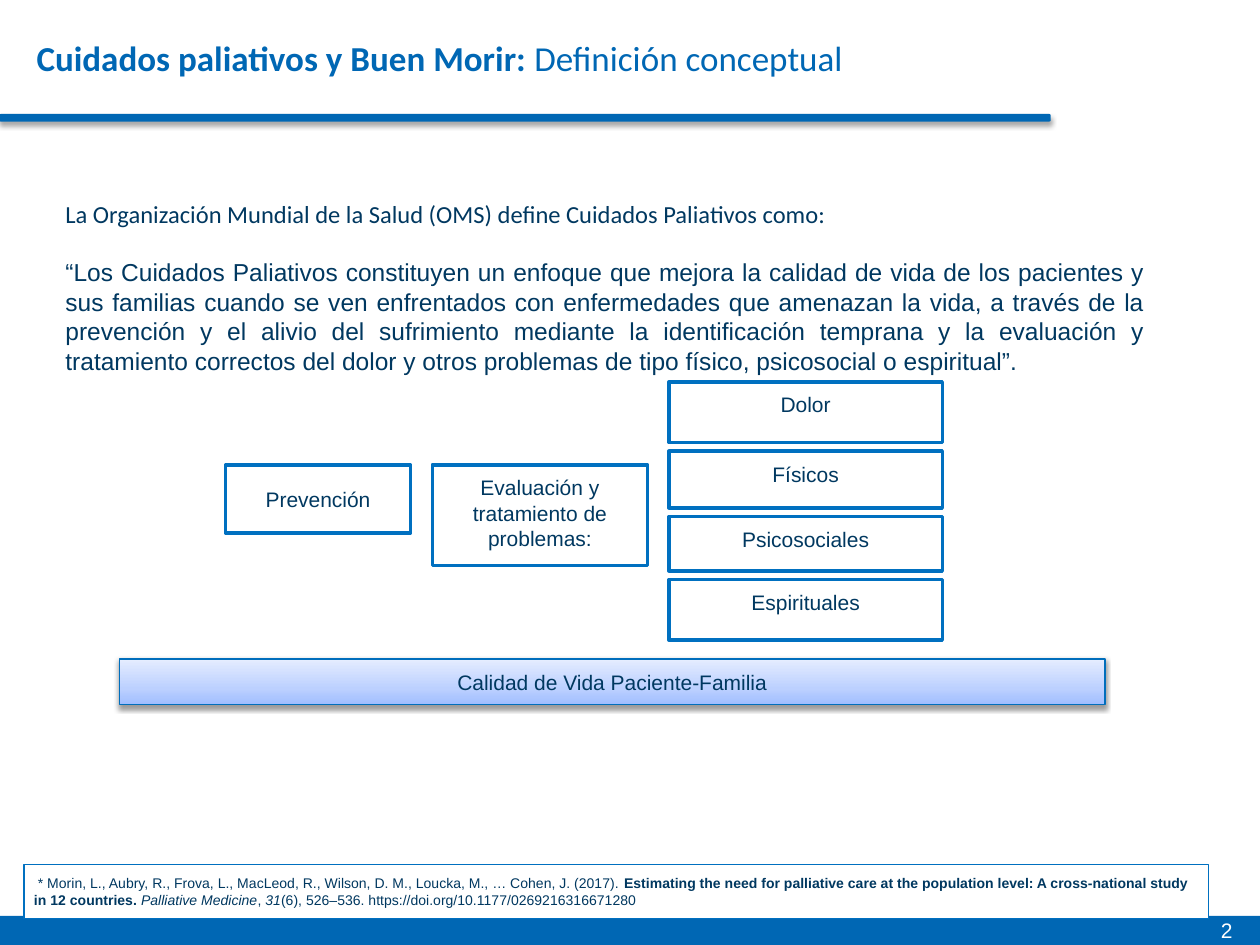
from copy import deepcopy

from lxml import etree
from pptx import Presentation
from pptx.dml.color import RGBColor
from pptx.enum.shapes import MSO_SHAPE
from pptx.enum.text import MSO_ANCHOR, PP_ALIGN
from pptx.oxml import parse_xml
from pptx.util import Pt

RECT, ROUNDED = MSO_SHAPE.RECTANGLE, MSO_SHAPE.ROUNDED_RECTANGLE
TOP, MIDDLE = MSO_ANCHOR.TOP, MSO_ANCHOR.MIDDLE
LEFT, CENTER, JUSTIFY = PP_ALIGN.LEFT, PP_ALIGN.CENTER, PP_ALIGN.JUSTIFY
NS = "http://schemas.openxmlformats.org/drawingml/2006/main"
COLORS = {
    "blue": "0067B4",
    "border": "0070C0",
    "bar_border": "006EBC",
    "navy": "003860",
    "white": "FFFFFF",
}
BAR_STOPS = [(0, "A0BEFF"), (0.35, "BCD0FF"), (1, "E5EDFF")]
INSET = 5.76

QUOTE = (
    "“Los Cuidados Paliativos constituyen un enfoque que mejora la calidad de vida "
    "de los pacientes y sus familias cuando se ven enfrentados con enfermedades que "
    "amenazan la vida, a través de la prevención y el alivio del sufrimiento mediante "
    "la identificación temprana y la evaluación y tratamiento correctos del dolor y "
    "otros problemas de tipo físico, psicosocial o espiritual”."
)
REFERENCE = [
    (" * Morin, L., Aubry, R., Frova, L., MacLeod, R., Wilson, D. M., Loucka, M., "
     "… Cohen, J. (2017). ", ""),
    ("Estimating the need for palliative care at the population level: "
     "A cross-national study in 12 countries. ", "b"),
    ("Palliative Medicine", "i"),
    (", ", ""),
    ("31", "i"),
    ("(6), 526–536. https://doi.org/10.1177/0269216316671280", ""),
]
PROBLEMS = [("Dolor", 34.6), ("Físicos", 32.4), ("Psicosociales", 31), ("Espirituales", 34.6)]


def rgb(name):
    return RGBColor.from_string(COLORS[name])


def write(p, text, size=12, font="Arial", color="navy", align=LEFT, before=0):
    """Fill a paragraph from a string or a list of (text, style), style being '', 'b' or 'i'."""
    p.alignment = align
    p.space_before = Pt(before)
    for part, style in [(text, "")] if isinstance(text, str) else text:
        r = p.add_run()
        r.text = part
        r.font.size = Pt(size)
        r.font.name = font
        r.font.color.rgb = rgb(color)
        r.font.bold = style == "b"
        r.font.italic = style == "i"


def set_frame(sp, inset=INSET, anchor=TOP):
    tf = sp.text_frame
    tf.word_wrap = True
    tf.vertical_anchor = anchor
    tf.margin_left = tf.margin_right = tf.margin_top = tf.margin_bottom = Pt(inset)
    return tf


def add_box(slide, x, y, w, h, shape=RECT, fill="white", line="border", width=2):
    sp = slide.shapes.add_shape(shape, Pt(x), Pt(y), Pt(w), Pt(h))
    sp.shadow.inherit = False
    sp.fill.solid()
    sp.fill.fore_color.rgb = rgb(fill)
    if line:
        sp.line.color.rgb = rgb(line)
        sp.line.width = Pt(width)
    else:
        sp.line.fill.background()
    return sp


def add_label(slide, text, x, y, w, h, anchor=TOP, width=2, line="border"):
    sp = add_box(slide, x, y, w, h, line=line, width=width)
    write(set_frame(sp, anchor=anchor).paragraphs[0], text, align=CENTER)
    return sp


def add_text(slide, x, y, w, h):
    return set_frame(slide.shapes.add_textbox(Pt(x), Pt(y), Pt(w), Pt(h)), inset=0)


def add_shadow(sp, blur, distance, alpha):
    """Cast a black shadow straight down; alpha is a percentage."""
    effects = sp._element.spPr.find(f"{{{NS}}}effectLst")
    shadow = etree.fromstring(
        f'<a:outerShdw xmlns:a="{NS}" blurRad="{Pt(blur)}" dist="{Pt(distance)}" '
        f'dir="5400000" rotWithShape="0"><a:srgbClr val="000000">'
        f'<a:alpha val="{alpha * 1000}"/></a:srgbClr></a:outerShdw>'
    )
    effects.append(parse_xml(etree.tostring(shadow)))


def set_gradient(sp, stops):
    """Blend the stops from the bottom of the shape to its top."""
    sp.fill.gradient()
    sp.fill.gradient_angle = 90
    gs_list = sp._element.spPr.find(f".//{{{NS}}}gsLst")
    while len(gs_list) < len(stops):
        gs_list.append(deepcopy(gs_list[-1]))
    for stop, (position, color) in zip(sp.fill.gradient_stops, stops):
        stop.position = position
        stop.color.rgb = RGBColor.from_string(color)


def add_furniture(slide):
    rule = add_box(slide, 0, 65.5, 600, 3.6, shape=ROUNDED, fill="blue", line="blue", width=0.75)
    rule.adjustments[0] = 0.12
    add_shadow(rule, 3.1, 1.8, 35)
    add_box(slide, 0, 523.4, 720, 16.6, fill="blue", line=None)
    tf = add_text(slide, 697.7, 524.2, 20, 15)
    write(tf.paragraphs[0], "2", color="white")


def add_definition(slide):
    tf = add_text(slide, 20.9, 20.9, 572.4, 24.5)
    title = [("Cuidados paliativos y Buen Morir: ", "b"), ("Definición conceptual", "")]
    write(tf.paragraphs[0], title, size=20, font="Calibri", color="blue")

    tf = add_text(slide, 37.4, 113.8, 617, 101.5)
    intro = "La Organización Mundial de la Salud (OMS) define Cuidados Paliativos como:"
    write(tf.paragraphs[0], intro, size=14, font="Calibri", align=JUSTIFY)
    write(tf.add_paragraph(), QUOTE, size=14, align=JUSTIFY, before=16.5)


def add_diagram(slide):
    add_label(slide, "Prevención", 128.9, 265.7, 105.8, 38.9, anchor=MIDDLE)
    add_label(slide, "Evaluación y tratamiento de problemas:", 247, 265.7, 123.1, 57.6)
    y, gap = 218.2, 5
    for text, height in PROBLEMS:
        add_label(slide, text, 382.3, y, 156.2, height)
        y += height + gap
    bar = add_label(slide, "Calidad de Vida Paciente-Familia", 68.4, 376.6, 563, 25.9,
                    width=0.75, line="bar_border")
    set_gradient(bar, BAR_STOPS)
    add_shadow(bar, 3.1, 1.6, 38)


def add_reference(slide):
    sp = add_box(slide, 13.7, 493.9, 676.8, 31, width=0.75)
    write(set_frame(sp).paragraphs[0], REFERENCE, size=8)


def main():
    prs = Presentation()
    prs.slide_width, prs.slide_height = Pt(720), Pt(540)
    slide = prs.slides.add_slide(prs.slide_layouts[6])
    add_furniture(slide)
    add_definition(slide)
    add_reference(slide)
    add_diagram(slide)
    prs.save("out.pptx")


if __name__ == "__main__":
    main()
